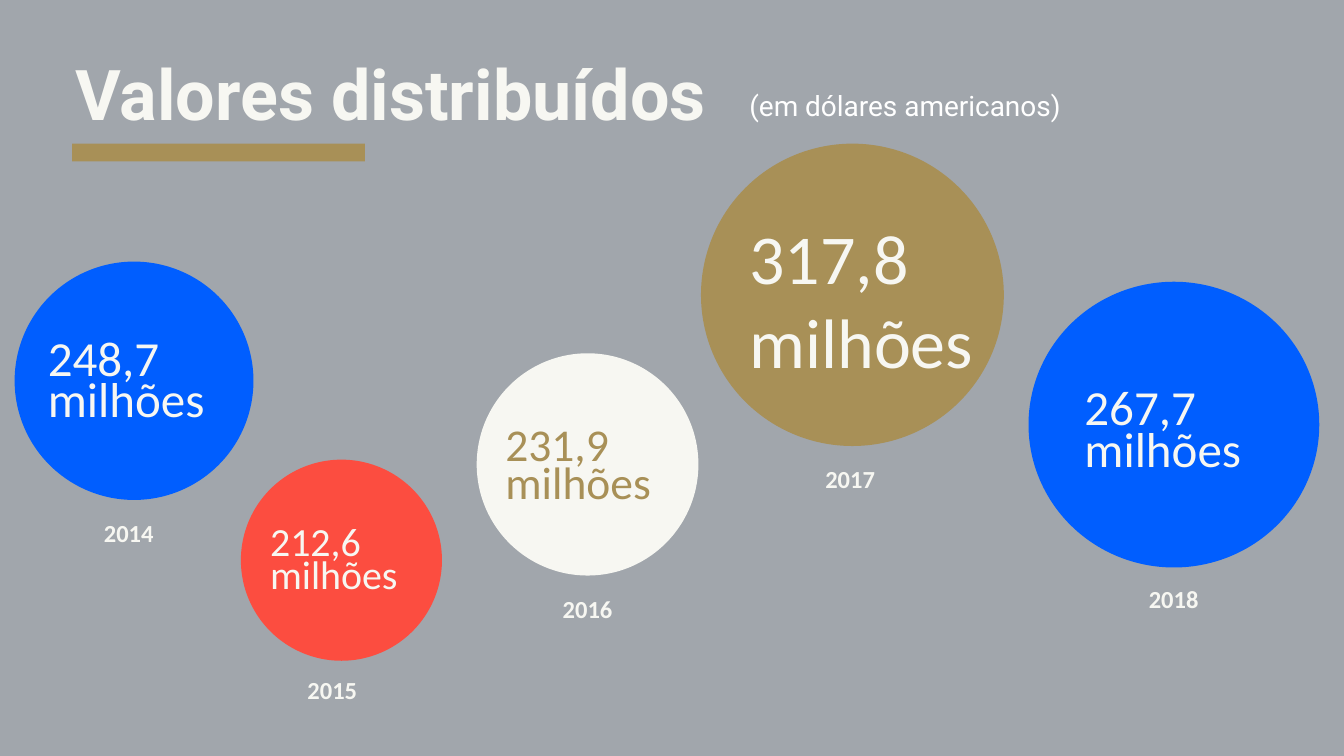
from pptx import Presentation
from pptx.dml.color import RGBColor
from pptx.enum.shapes import MSO_SHAPE as SHAPE
from pptx.enum.text import MSO_ANCHOR as ANCHOR, MSO_AUTO_SIZE as AUTO, PP_ALIGN as ALIGN
from pptx.util import Inches, Pt

COLORS = {
    "gray": "A1A6AC",
    "cream": "F7F7F2",
    "white": "FFFFFF",
    "blue": "005EFF",
    "red": "FC4D40",
    "gold": "A89057",
}


class SlideBuilder:
    body_font = "Calibri"
    title_font = "Roboto"

    def __init__(self, slide):
        self.s = slide

    def shape(self, kind, box, color):
        sp = self.s.shapes.add_shape(kind, *map(Inches, box))
        sp.shadow.inherit = False
        sp.fill.solid()
        sp.fill.fore_color.rgb = RGBColor.from_string(COLORS[color])
        sp.line.fill.background()
        return sp

    def text(self, box, text, size, color="cream", font=body_font, bold=False,
             align=ALIGN.LEFT, anchor=ANCHOR.MIDDLE, spacing=None, before=None,
             inset=0.08, auto_size=AUTO.NONE):
        sp = self.s.shapes.add_textbox(*map(Inches, box))
        tf = sp.text_frame
        tf.text = text
        tf.word_wrap = True
        tf.auto_size = auto_size
        tf.vertical_anchor = anchor
        tf.margin_left = tf.margin_right = Inches(inset)
        tf.margin_top = tf.margin_bottom = Inches(inset)
        for p in tf.paragraphs:
            p.alignment = align
            if spacing:
                p.line_spacing = spacing
            if before:
                p.space_before = Pt(before)
            for r in p.runs:
                r.font.name = font
                r.font.size = Pt(size)
                r.font.bold = bold
                r.font.color.rgb = RGBColor.from_string(COLORS[color])
        return sp

    def bubble(self, year, amount, circle, fill, amount_box, size, year_box,
               color="cream", spacing=0.7):
        self.shape(SHAPE.OVAL, circle, fill)
        self.text(amount_box, f"{amount}\nmilhões", size, color, spacing=spacing)
        self.text(year_box, year, 35, bold=True, align=ALIGN.CENTER, spacing=0.8)


def main():
    prs = Presentation()
    prs.slide_width, prs.slide_height = Inches(26.67), Inches(15)
    b = SlideBuilder(prs.slides.add_slide(prs.slide_layouts[6]))

    b.shape(SHAPE.RECTANGLE, (-0.29, -0.08, 26.96, 15.26), "gray")
    b.text((1.43, 0.94, 13.63, 1.83), "Valores distribuídos", 100, font=b.title_font,
           bold=True, anchor=ANCHOR.TOP, before=8, inset=0.07,
           auto_size=AUTO.SHAPE_TO_FIT_TEXT)

    b.bubble("2014", "248,7", (0.29, 5.19, 4.74, 4.73), "blue",
             (0.87, 6.04, 4.47, 3.17), 70, (1.43, 9.56, 2.25, 2.12))
    b.bubble("2015", "212,6", (4.78, 9.12, 3.99, 3.99), "red",
             (5.28, 10.22, 3.43, 1.89), 57, (5.46, 12.91, 2.27, 1.66))
    b.bubble("2016", "231,9", (9.46, 7.01, 4.4, 4.41), "cream",
             (9.95, 7.98, 3.76, 2.64), 65, (10.54, 11.07, 2.24, 2.12), color="gold")
    b.bubble("2017", "317,8", (13.91, 2.85, 6.01, 6), "gold",
             (14.79, 3.72, 5.48, 4.42), 100, (15.78, 8.49, 2.18, 2.12), spacing=None)

    b.shape(SHAPE.RECTANGLE, (1.43, 2.85, 5.81, 0.35), "gold")
    b.text((14.79, 1.67, 7.41, 0.83), "(em dólares americanos)", 40, "white",
           b.title_font, auto_size=AUTO.SHAPE_TO_FIT_TEXT)

    b.bubble("2018", "267,7", (20.41, 5.59, 5.77, 5.67), "blue",
             (21.44, 7.03, 4.47, 3.17), 70, (22.2, 10.87, 2.18, 2.12))

    prs.save("out.pptx")


if __name__ == "__main__":
    main()
